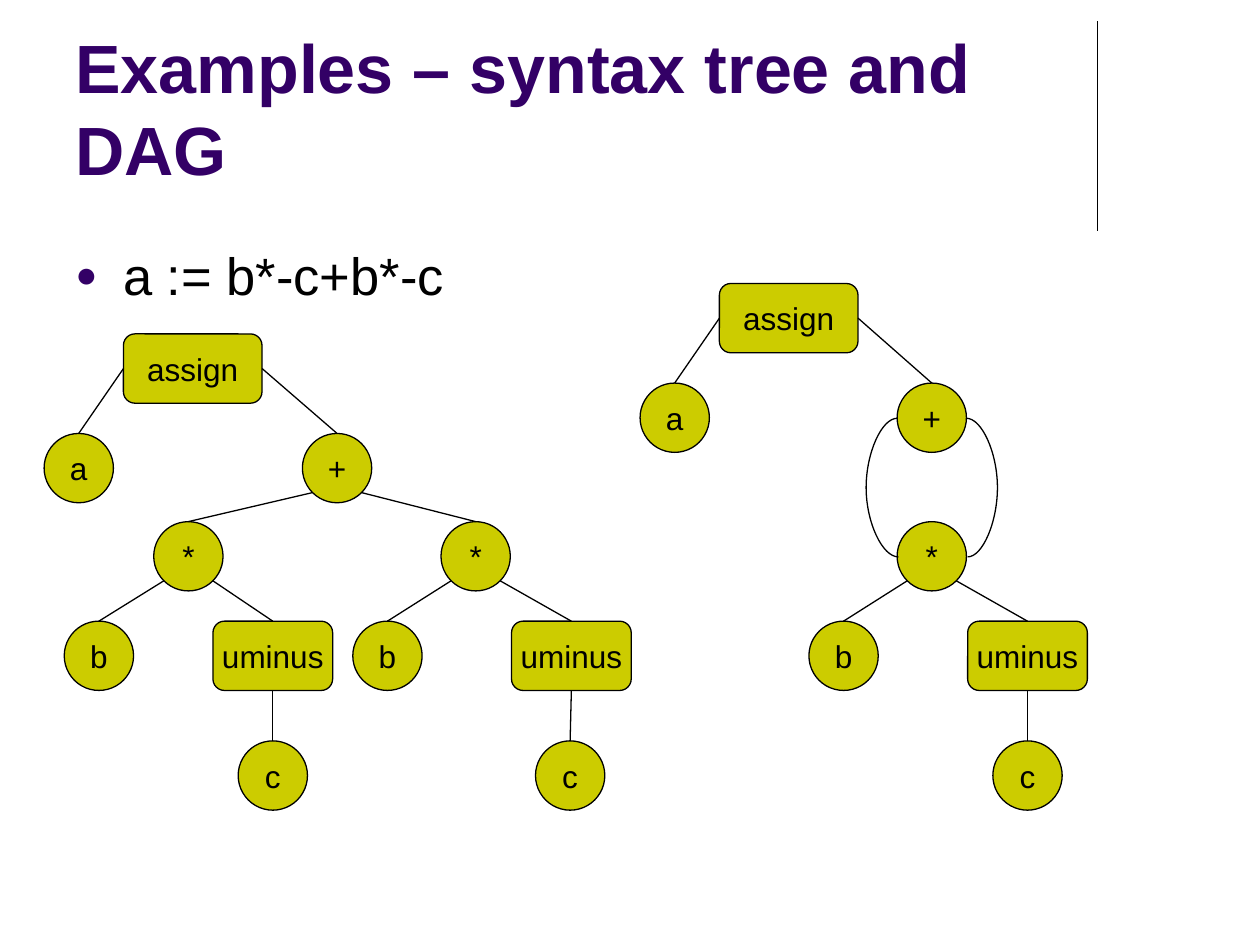
import math
from lxml import etree
from pptx import Presentation
from pptx.dml.color import RGBColor
from pptx.enum.shapes import MSO_CONNECTOR, MSO_SHAPE
from pptx.enum.text import MSO_ANCHOR, PP_ALIGN
from pptx.oxml.ns import qn
from pptx.util import Inches, Pt

STRAIGHT, CURVE = MSO_CONNECTOR.STRAIGHT, MSO_CONNECTOR.CURVE
ROUNDED, OVAL = MSO_SHAPE.ROUNDED_RECTANGLE, MSO_SHAPE.OVAL
MIDDLE, BOTTOM_ANCHOR = MSO_ANCHOR.MIDDLE, MSO_ANCHOR.BOTTOM
CENTER = PP_ALIGN.CENTER
TOP, LEFT, BOTTOM, RIGHT = range(4)
SIZE = 0.55


def color(value):
    return RGBColor.from_string(value)


def add_line(kind, start, end):
    line = page.shapes.add_connector(kind, *(Inches(value) for value in start + end))
    line.line.color.rgb = color("000000")
    line.line.width = Pt(0.75)
    etree.SubElement(line._element.spPr, qn("a:effectLst"))
    return line


deck = Presentation()
deck.slide_width, deck.slide_height = Inches(10), Inches(7.5)
page = deck.slides.add_slide(deck.slide_layouts[6])

add_line(STRAIGHT, (8.71, 0.17), (8.71, 1.83))

title = page.shapes.add_textbox(Inches(0.5), Inches(0.13), Inches(8.25), Inches(1.42))
title.text_frame.text = "Examples – syntax tree and DAG"
title.text_frame.word_wrap = True
title.text_frame.vertical_anchor = BOTTOM_ANCHOR
body = page.shapes.add_textbox(Inches(0.5), Inches(1.88), Inches(9), Inches(0.61))
body.text_frame.text = "a := b*-c+b*-c"
body.text_frame.word_wrap = True

bullet_para = body.text_frame.paragraphs[0]
properties = bullet_para._p.get_or_add_pPr()
properties.set("marL", str(Inches(0.38)))
properties.set("indent", str(-Inches(0.38)))
bullet_color = etree.SubElement(properties, qn("a:buClr"))
etree.SubElement(bullet_color, qn("a:srgbClr"), val="330066")
etree.SubElement(properties, qn("a:buSzPct"), val="70000")
etree.SubElement(properties, qn("a:buFont"), typeface="Arial")
etree.SubElement(properties, qn("a:buChar"), char="●")

text_formats = [
    (title, "330066", {"name": "Arial", "size": Pt(39), "bold": True}),
    (body, "000000", {"name": "Arial", "size": Pt(30)}),
]

nodes = [
    ("assign", "assign", 0.98, 2.65, 1.1),
    ("right uminus", "uminus", 4.06, 4.93, 0.95),
    ("left uminus", "uminus", 1.69, 4.93, 0.95),
    ("a", "a", 0.35, 3.44, SIZE),
    ("plus", "+", 2.4, 3.44, SIZE),
    ("left times", "*", 1.22, 4.14, SIZE),
    ("right times", "*", 3.5, 4.14, SIZE),
    ("left b", "b", 0.51, 4.93, SIZE),
    ("right b", "b", 2.8, 4.93, SIZE),
    ("left c", "c", 1.89, 5.88, SIZE),
    ("right c", "c", 4.25, 5.88, SIZE),
    ("dag assign", "assign", 5.71, 2.25, 1.1),
    ("dag uminus", "uminus", 7.68, 4.93, 0.95),
    ("dag a", "a", 5.08, 3.04, SIZE),
    ("dag plus", "+", 7.12, 3.04, SIZE),
    ("dag times", "*", 7.12, 4.14, SIZE),
    ("dag b", "b", 6.42, 4.93, SIZE),
    ("dag c", "c", 7.88, 5.88, SIZE),
]
shapes = {}
centers = {}
for key, label, left, top, width in nodes:
    kind = OVAL if width == SIZE else ROUNDED
    node = page.shapes.add_shape(kind, Inches(left), Inches(top), Inches(width), Inches(SIZE))
    node.shadow.inherit = False
    node.fill.solid()
    node.fill.fore_color.rgb = color("CCCC00")
    node.line.color.rgb = color("000000")
    node.line.width = Pt(0.75)
    frame = node.text_frame
    frame.text = label
    frame.word_wrap = False
    frame.vertical_anchor = MIDDLE
    frame.paragraphs[0].alignment = CENTER
    text_formats.append((node, "000000", {"name": "Arial", "size": Pt(18)}))
    shapes[key] = node
    centers[key] = (left + width / 2, top + SIZE / 2)

for box, text_color, font_format in text_formats:
    span = box.text_frame.paragraphs[0].runs[0]
    span.font.color.rgb = color(text_color)
    for name, value in font_format.items():
        setattr(span.font, name, value)

edges = [
    ("assign", "a", LEFT),
    ("assign", "plus", RIGHT),
    ("plus", "left times", LEFT),
    ("plus", "right times", RIGHT),
    ("left times", "left b", LEFT),
    ("right times", "right b", LEFT),
    ("left times", "left uminus", RIGHT),
    ("left uminus", "left c", BOTTOM),
    ("right times", "right uminus", RIGHT),
    ("right uminus", "right c", BOTTOM),
    ("dag assign", "dag a", LEFT),
    ("dag assign", "dag plus", RIGHT),
    ("dag times", "dag b", LEFT),
    ("dag times", "dag uminus", RIGHT),
    ("dag uminus", "dag c", BOTTOM),
]
diagonal = SIZE / 2 * math.sqrt(0.5)
for parent, child, side in edges:
    x, y = centers[parent]
    start = (x + (side - BOTTOM) * diagonal, y + diagonal)
    edge = add_line(STRAIGHT, start, centers[child])
    if shapes[parent].auto_shape_type == ROUNDED:
        edge.begin_connect(shapes[parent], side)
    edge.end_connect(shapes[child], TOP)

for x, bend in [(7.12, -25), (7.67, 25)]:
    arc = add_line(CURVE, (x, 3.32), (x + 0.01, 4.42))
    guides = arc._element.spPr.find(qn("a:prstGeom")).find(qn("a:avLst"))
    etree.SubElement(guides, qn("a:gd"), name="adj1", fmla=f"val {bend * 100000}")

deck.save("out.pptx")
